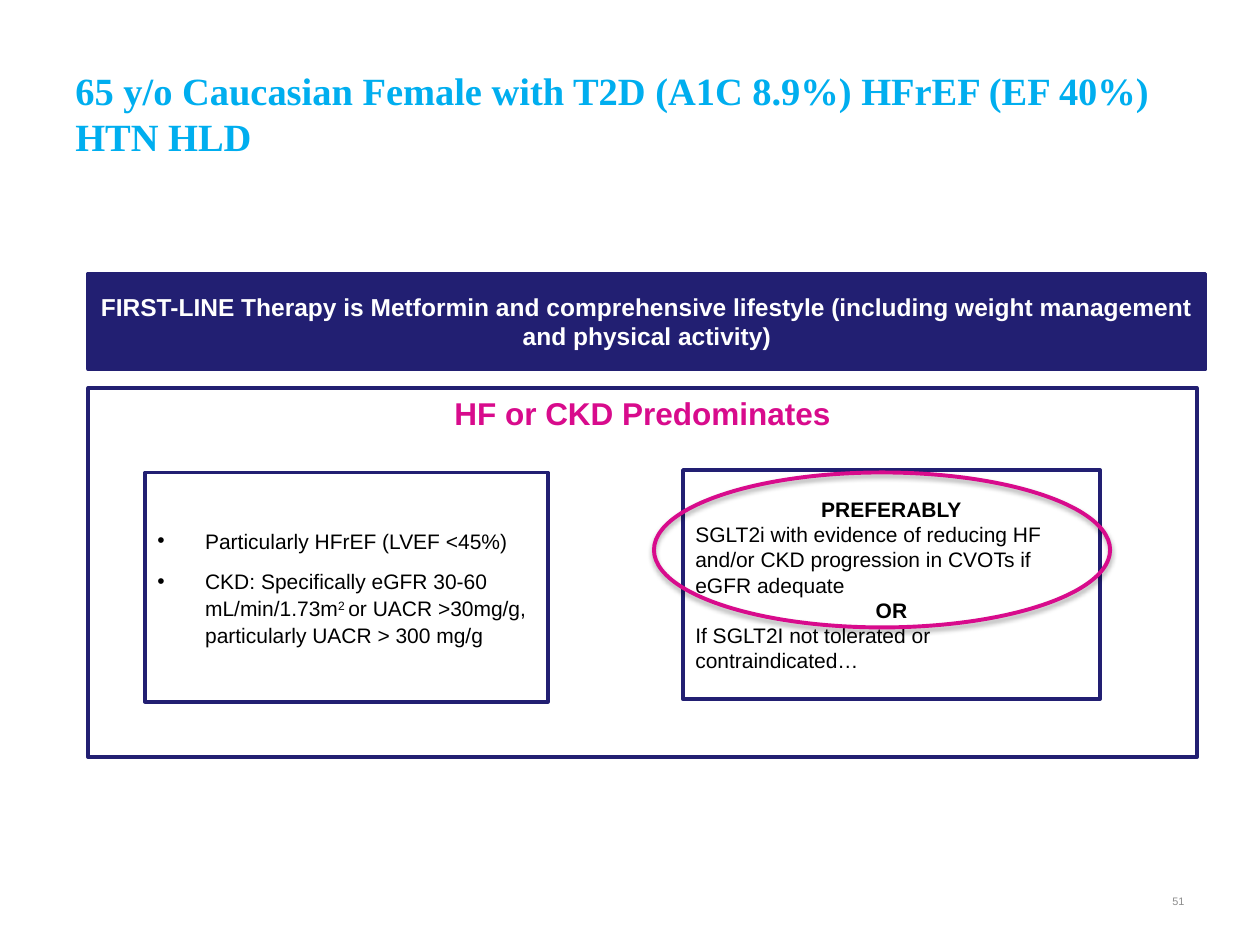
from lxml import etree
from pptx import Presentation
from pptx.dml.color import RGBColor
from pptx.enum.shapes import MSO_SHAPE
from pptx.enum.text import MSO_ANCHOR, PP_ALIGN
from pptx.oxml.ns import qn
from pptx.util import Inches, Pt

RECTANGLE, OVAL = MSO_SHAPE.RECTANGLE, MSO_SHAPE.OVAL
TOP, MIDDLE = MSO_ANCHOR.TOP, MSO_ANCHOR.MIDDLE
LEFT, CENTER, RIGHT = PP_ALIGN.LEFT, PP_ALIGN.CENTER, PP_ALIGN.RIGHT

NAVY = RGBColor(0x22, 0x1F, 0x72)
MAGENTA = RGBColor(0xD8, 0x0B, 0x8C)
CYAN = RGBColor(0x00, 0xAE, 0xEF)
GRAY = RGBColor(0x8C, 0x8C, 0x8C)
WHITE = RGBColor(0xFF, 0xFF, 0xFF)
BLACK = RGBColor(0x00, 0x00, 0x00)

COLUMNS, ROWS = 100, 75  # grid cells of a tenth of an inch


class SlideBuilder:
    """Holds the style and the current slide; places are in grid cells."""

    body_font = "Arial"
    title_font = "Times New Roman"
    border = Pt(2)

    def __init__(self, presentation):
        self.cell_width = presentation.slide_width / COLUMNS
        self.cell_height = presentation.slide_height / ROWS
        self.slide = presentation.slides.add_slide(presentation.slide_layouts[6])

    def place(self, column, row, width, height):
        return (round(column * self.cell_width), round(row * self.cell_height),
                round(width * self.cell_width), round(height * self.cell_height))

    def fill_text(self, shape, paragraphs, anchor):
        """Each paragraph is (runs, format); each run is (text, font values)."""
        frame = shape.text_frame
        frame.word_wrap = True
        frame.vertical_anchor = anchor
        for index, (runs, layout) in enumerate(paragraphs):
            paragraph = frame.paragraphs[0] if index == 0 else frame.add_paragraph()
            layout = dict(layout)
            if layout.pop("bullet", False):
                self.add_bullet(paragraph)
            for name, value in layout.items():
                setattr(paragraph, name, value)
            for text, values in runs:
                run = paragraph.add_run()
                run.text = text
                values = {"name": self.body_font, "bold": False, **values}
                run.font.color.rgb = values.pop("color", BLACK)
                baseline = values.pop("baseline", None)
                for name, value in values.items():
                    setattr(run.font, name, value)
                if baseline:
                    run.font._element.set("baseline", baseline)

    def add_bullet(self, paragraph):
        properties = paragraph._p.get_or_add_pPr()
        indent = Inches(0.38)
        properties.set("marL", str(indent))
        properties.set("indent", str(-indent))
        etree.SubElement(properties, qn("a:buFont")).set("typeface", "Arial")
        etree.SubElement(properties, qn("a:buChar")).set("char", "•")

    def text(self, box, paragraphs, anchor=TOP):
        shape = self.slide.shapes.add_textbox(*self.place(*box))
        self.fill_text(shape, paragraphs, anchor)

    def panel(self, box, paragraphs, anchor=MIDDLE, fill=WHITE):
        shape = self.slide.shapes.add_shape(RECTANGLE, *self.place(*box))
        shape.shadow.inherit = False
        shape.fill.solid()
        shape.fill.fore_color.rgb = fill
        shape.line.color.rgb = NAVY
        shape.line.width = self.border
        self.fill_text(shape, paragraphs, anchor)

    def highlight(self, box):
        """An unfilled ellipse with a soft shadow below it."""
        shape = self.slide.shapes.add_shape(OVAL, *self.place(*box))
        shape.shadow.inherit = False
        shape.fill.background()
        shape.line.color.rgb = MAGENTA
        shape.line.width = Pt(2.25)
        effects = shape._element.spPr.find(qn("a:effectLst"))
        shadow = etree.SubElement(effects, qn("a:outerShdw"), blurRad=str(Pt(3.1)),
                                  dist=str(Pt(1.8)), dir="5400000", rotWithShape="0")
        color = etree.SubElement(shadow, qn("a:srgbClr"), val=str(BLACK))
        etree.SubElement(color, qn("a:alpha"), val="35000")


def main():
    presentation = Presentation()
    presentation.slide_width, presentation.slide_height = Inches(10), Inches(7.5)
    builder = SlideBuilder(presentation)

    body = {"size": Pt(12)}
    strong = {**body, "bold": True}
    left = {"alignment": LEFT}
    center = {"alignment": CENTER}
    bullet = {"bullet": True, "alignment": LEFT, "line_spacing": 1.07, "space_after": Pt(8)}

    # Title and slide number
    builder.text((5, 4.8, 90, 6.8), [
        ([("65 y/o Caucasian Female with T2D (A1C 8.9%) HFrEF (EF 40%) HTN HLD",
           {"name": builder.title_font, "size": Pt(22), "bold": True, "color": CYAN})],
         left)])
    builder.text((71.7, 69.5, 23.3, 4),
                 [([("51", {"size": Pt(6.2), "color": GRAY})], {"alignment": RIGHT})], MIDDLE)

    # First-line therapy banner
    builder.panel((7, 21.7, 88.7, 7.6), [
        ([("FIRST-LINE Therapy is Metformin and comprehensive lifestyle "
           "(including weight management and physical activity)",
           {"size": Pt(14), "bold": True, "color": WHITE})], center)], fill=NAVY)

    # Heading panel behind the two boxes
    builder.panel((7, 30.8, 88, 29.3), [
        ([("HF or CKD Predominates",
           {"size": Pt(18), "bold": True, "color": MAGENTA})], center)], TOP)

    # Patient criteria
    builder.panel((11.5, 37.5, 32, 18.2), [
        ([("Particularly HFrEF (LVEF <45%)", body)], bullet),
        ([("CKD: Specifically eGFR 30-60 mL/min/1.73m", body),
          ("2 ", {**body, "baseline": "30000"}),
          ("or UACR >30mg/g, particularly UACR > 300 mg/g", body)], bullet)])

    # Preferred treatment, ringed
    builder.panel((54.2, 37.3, 33.1, 18.2), [
        ([("PREFERABLY", strong)], center),
        ([("SGLT2i with evidence of reducing HF and/or CKD progression in CVOTs "
           "if eGFR adequate", body)], left),
        ([("OR", strong)], center),
        ([("If SGLT2I not tolerated or contraindicated…", body)], left)])
    builder.highlight((51.9, 37.5, 36.2, 12.3))

    presentation.save("out.pptx")


if __name__ == "__main__":
    main()
